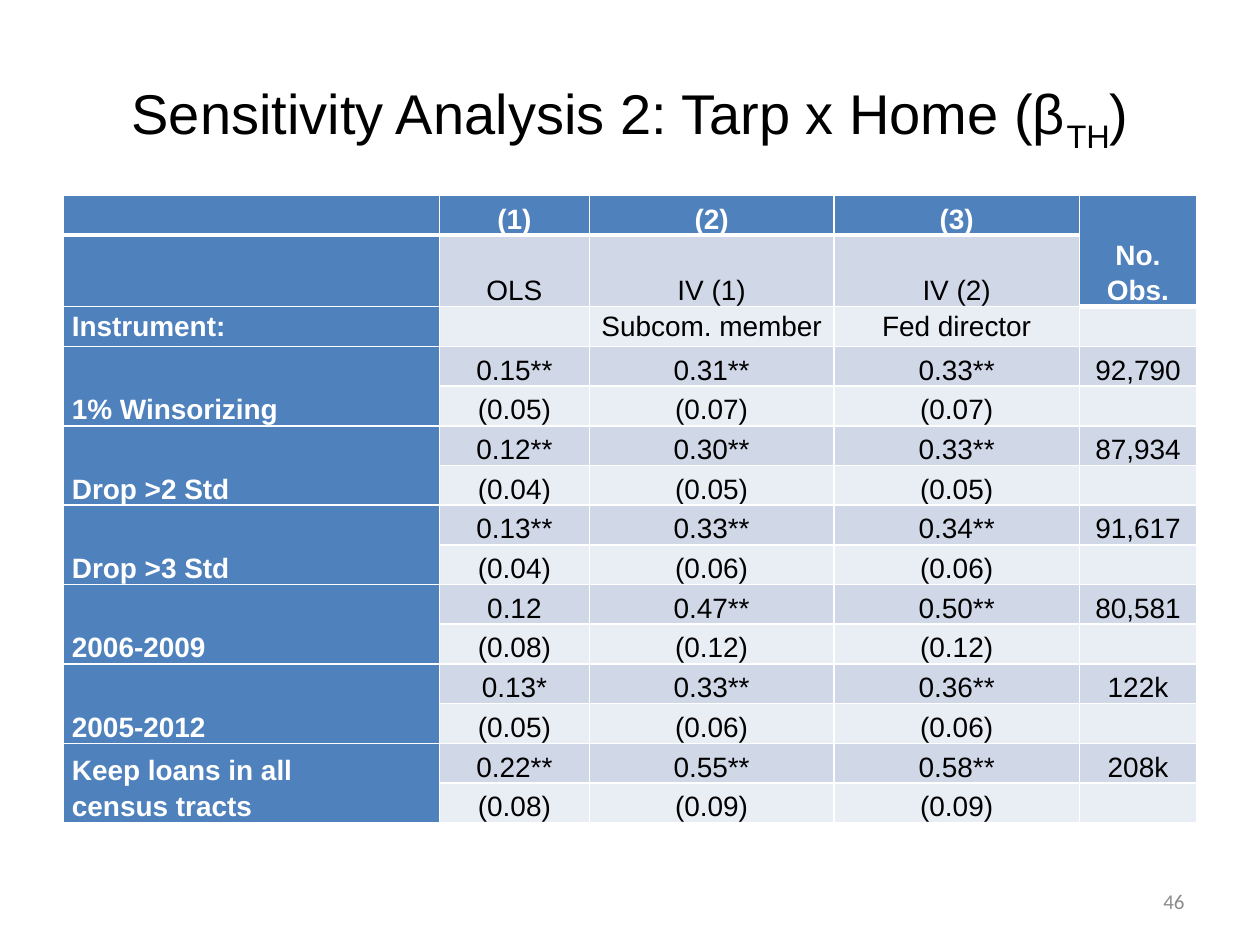
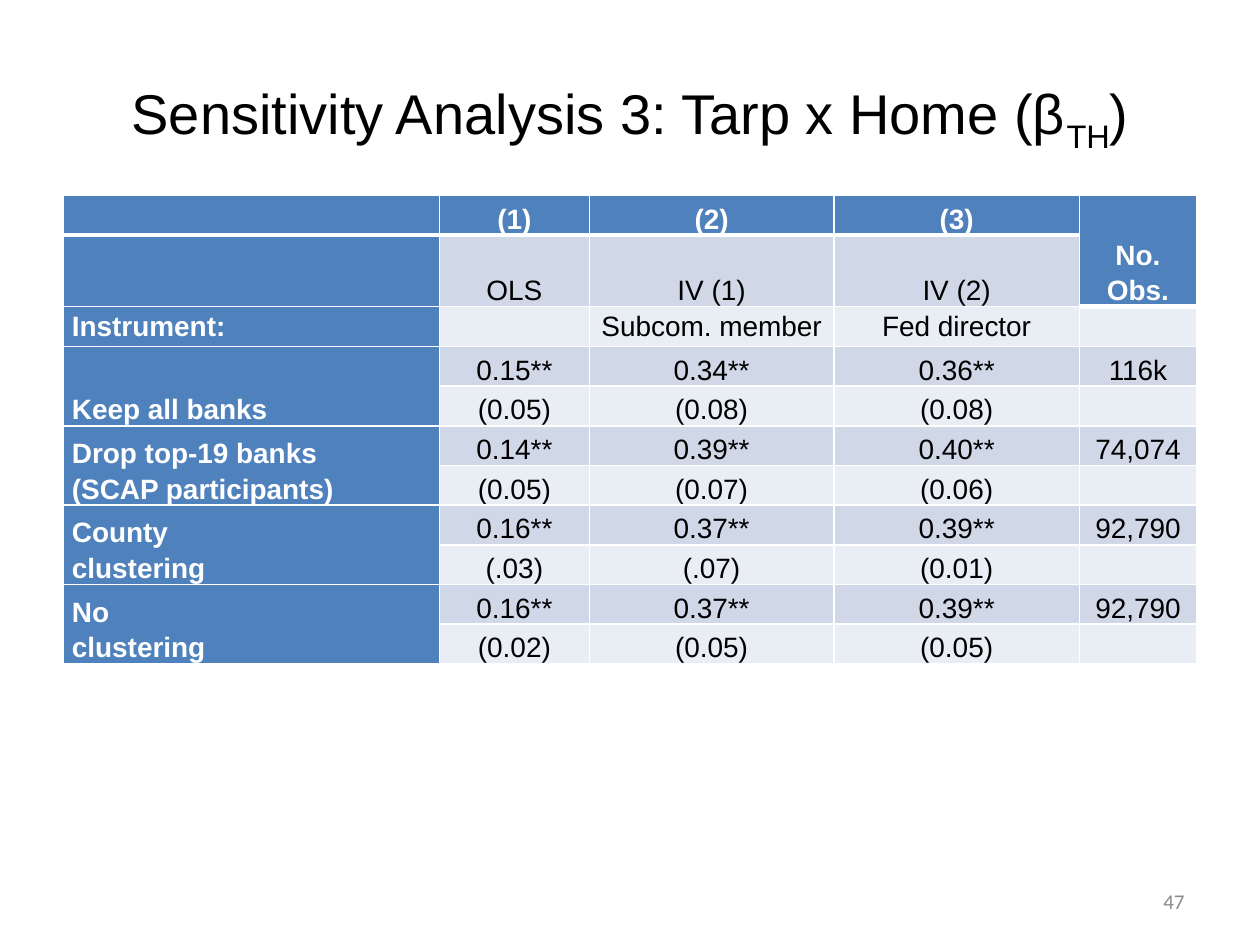
from dataclasses import dataclass

import pptx
import pptx.dml.color
import pptx.enum.text
import pptx.oxml
import pptx.oxml.ns
import pptx.slide
import pptx.table
import pptx.util

Cm = pptx.util.Cm
Pt = pptx.util.Pt
RGBColor = pptx.dml.color.RGBColor
ANCHOR = pptx.enum.text.MSO_ANCHOR
ALIGN = pptx.enum.text.PP_ALIGN

# Shared look
BLUE = RGBColor(0x4F, 0x81, 0xBD)
BAND_DARK = RGBColor(0xD0, 0xD8, 0xE8)
BAND_LIGHT = RGBColor(0xE9, 0xED, 0xF4)
WHITE = RGBColor(0xFF, 0xFF, 0xFF)
BLACK = RGBColor(0x00, 0x00, 0x00)
GREY = RGBColor(0x8C, 0x8C, 0x8C)
TABLE_FONT = "Arial"
NUMBER_FONT = "Calibri"

LEFT, WIDTH = Cm(1.27), Cm(22.86)
TITLE_TOP, TITLE_HEIGHT = Cm(0.76), Cm(3.18)
TABLE_TOP = Cm(3.94)
COLUMN_WIDTHS = [Cm(7.59), Cm(3.02), Cm(4.93), Cm(4.95), Cm(2.36)]
ROW_HEIGHT, METHOD_ROW_HEIGHT = Cm(0.8), Cm(1.43)
SIDE_MARGIN = Cm(0.18)
BORDERS = {"lnL": 1, "lnR": 1, "lnT": 1, "lnB": 3}

HEADING_ROWS = [
    ["", "(1)", "(2)", "(3)", "No.\nObs."],
    ["", "OLS", "IV (1)", "IV (2)", ""],
    ["Instrument:", "", "Subcom. member", "Fed director", ""],
]
METHOD_ROW, INSTRUMENT_ROW = 1, 2


@dataclass(frozen=True)
class Check:
    """One robustness check: estimates above their standard errors."""
    label: str
    estimates: list[str]
    errors: list[str]
    observations: str

    def rows(self) -> list[list[str]]:
        return [[self.label, *self.estimates, self.observations],
                ["", *self.errors, ""]]


@dataclass(frozen=True)
class Sensitivity:
    analysis_number: int
    page_number: int
    checks: list[Check]


ANALYSES = [
    Sensitivity(2, 46, [
        Check("1% Winsorizing", ["0.15**", "0.31**", "0.33**"],
              ["(0.05)", "(0.07)", "(0.07)"], "92,790"),
        Check("Drop >2 Std", ["0.12**", "0.30**", "0.33**"],
              ["(0.04)", "(0.05)", "(0.05)"], "87,934"),
        Check("Drop >3 Std", ["0.13**", "0.33**", "0.34**"],
              ["(0.04)", "(0.06)", "(0.06)"], "91,617"),
        Check("2006-2009", ["0.12", "0.47**", "0.50**"],
              ["(0.08)", "(0.12)", "(0.12)"], "80,581"),
        Check("2005-2012", ["0.13*", "0.33**", "0.36**"],
              ["(0.05)", "(0.06)", "(0.06)"], "122k"),
        Check("Keep loans in all\ncensus tracts", ["0.22**", "0.55**", "0.58**"],
              ["(0.08)", "(0.09)", "(0.09)"], "208k"),
    ]),
    Sensitivity(3, 47, [
        Check("Keep all banks", ["0.15**", "0.34**", "0.36**"],
              ["(0.05)", "(0.08)", "(0.08)"], "116k"),
        Check("Drop top-19 banks\n(SCAP participants)", ["0.14**", "0.39**", "0.40**"],
              ["(0.05)", "(0.07)", "(0.06)"], "74,074"),
        Check("County\nclustering", ["0.16**", "0.37**", "0.39**"],
              ["(.03)", "(.07)", "(0.01)"], "92,790"),
        Check("No\nclustering", ["0.16**", "0.37**", "0.39**"],
              ["(0.02)", "(0.05)", "(0.05)"], "92,790"),
    ]),
]


def add_title(page: pptx.slide.Slide, analysis_number: int) -> None:
    title = page.shapes.title
    title.left, title.top = LEFT, TITLE_TOP
    title.width, title.height = WIDTH, TITLE_HEIGHT
    title.text_frame.vertical_anchor = ANCHOR.MIDDLE
    para = title.text_frame.paragraphs[0]
    para.alignment = ALIGN.CENTER
    para.font.name, para.font.size = TABLE_FONT, Pt(32)
    para.font.color.rgb = BLACK
    for text in (f"Sensitivity Analysis {analysis_number}: Tarp x Home (β", "TH", ")"):
        span = para.add_run()
        span.text = text
        if text == "TH":
            span.font._element.set("baseline", "-25000")


def add_borders(cell: pptx.table._Cell) -> None:
    properties = cell._tc.get_or_add_tcPr()
    for side, points in BORDERS.items():
        properties.append(pptx.oxml.parse_xml(
            f'<a:{side} {pptx.oxml.ns.nsdecls("a")} w="{int(Pt(points))}">'
            f'<a:solidFill><a:srgbClr val="{WHITE}"/></a:solidFill></a:{side}>'))


def fill_cell(cell: pptx.table._Cell, text: str, row: int, column: int) -> None:
    heading = row == 0 or column == 0
    if row == 0:
        add_borders(cell)
    cell.fill.solid()
    cell.fill.fore_color.rgb = BLUE if heading else BAND_DARK if row % 2 else BAND_LIGHT
    cell.margin_left = cell.margin_right = SIDE_MARGIN
    cell.margin_top = cell.margin_bottom = 0
    cell.vertical_anchor = ANCHOR.TOP if row == INSTRUMENT_ROW else ANCHOR.BOTTOM
    cell.text = text
    for para in cell.text_frame.paragraphs:
        para.alignment = ALIGN.CENTER if column else ALIGN.LEFT
        para.line_spacing = 1.15
        para.font.name, para.font.size = TABLE_FONT, Pt(16)
        para.font.bold = heading
        para.font.color.rgb = WHITE if heading else BLACK


def add_results(page: pptx.slide.Slide, checks: list[Check]) -> None:
    rows = HEADING_ROWS + [row for check in checks for row in check.rows()]
    height = ROW_HEIGHT * (len(rows) - 1) + METHOD_ROW_HEIGHT
    table = page.shapes.add_table(
        len(rows), len(COLUMN_WIDTHS), LEFT, TABLE_TOP, WIDTH, height).table
    table.first_col = True
    for column, width in zip(table.columns, COLUMN_WIDTHS):
        column.width = width
    for row, texts in enumerate(rows):
        table.rows[row].height = METHOD_ROW_HEIGHT if row == METHOD_ROW else ROW_HEIGHT
        for column, text in enumerate(texts):
            fill_cell(table.cell(row, column), text, row, column)

    # Two-row cells: the observations heading and each check's label
    last = len(COLUMN_WIDTHS) - 1
    table.cell(0, last).merge(table.cell(METHOD_ROW, last))
    for top in range(len(HEADING_ROWS), len(rows), 2):
        table.cell(top, 0).merge(table.cell(top + 1, 0))


def add_page_number(page: pptx.slide.Slide, number: int) -> None:
    box = page.shapes.add_textbox(Cm(18.21), Cm(17.65), Cm(5.92), Cm(1.02))
    box.text_frame.word_wrap = True
    box.text_frame.vertical_anchor = ANCHOR.MIDDLE
    para = box.text_frame.paragraphs[0]
    para.text = str(number)
    para.alignment = ALIGN.RIGHT
    para.font.name, para.font.size = NUMBER_FONT, Pt(12)
    para.font.color.rgb = GREY


def main() -> None:
    deck = pptx.Presentation()
    deck.slide_width, deck.slide_height = Cm(25.4), Cm(19.05)
    title_only = deck.slide_layouts[5]
    for analysis in ANALYSES:
        page = deck.slides.add_slide(title_only)
        add_title(page, analysis.analysis_number)
        add_results(page, analysis.checks)
        add_page_number(page, analysis.page_number)
    deck.save("out.pptx")


if __name__ == "__main__":
    main()
